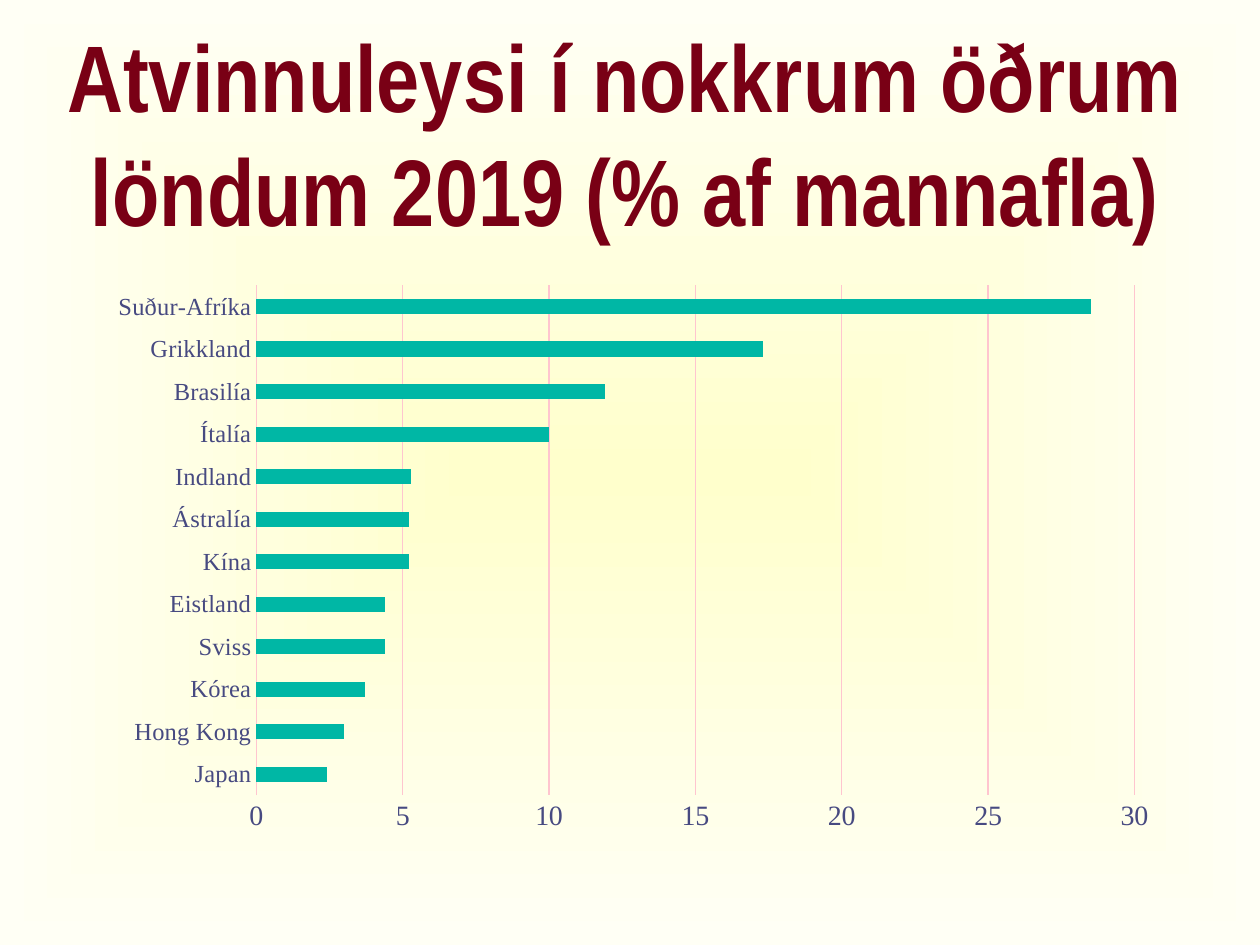
from lxml import etree
from pptx import Presentation
from pptx.chart.data import CategoryChartData
from pptx.dml.color import RGBColor
from pptx.enum.chart import XL_CHART_TYPE, XL_TICK_MARK
from pptx.enum.text import MSO_ANCHOR, PP_ALIGN
from pptx.oxml import parse_xml
from pptx.oxml.ns import nsdecls, qn
from pptx.util import Inches, Pt

BAR = XL_CHART_TYPE.BAR_CLUSTERED
NO_TICK = XL_TICK_MARK.NONE
MIDDLE = MSO_ANCHOR.MIDDLE
CENTER = PP_ALIGN.CENTER

CREAM = RGBColor(0xFF, 0xFF, 0xCC)
IVORY = RGBColor(0xFF, 0xFF, 0xF5)
MAROON = RGBColor(0x79, 0x00, 0x15)
INDIGO = RGBColor(0x47, 0x4A, 0x81)
PINK = RGBColor(0xFF, 0xC5, 0xCF)
TEAL = RGBColor(0x00, 0xB7, 0xA5)

WIDTH, HEIGHT = Inches(10), Inches(7.5)
SERIF = "Times New Roman"
TITLE = "Atvinnuleysi í nokkrum öðrum löndum 2019 (% af mannafla)"
TITLE_BOX = (0.035, 0.056, 0.922, 0.167)
CHART_BOX = (0.076, 0.29, 0.85, 0.6)
PLOT_BOX = {"x": 0.15, "y": 0.02, "w": 0.82, "h": 0.9}
UNEMPLOYMENT = {
    "Japan": 2.4, "Hong Kong": 3, "Kórea": 3.7, "Sviss": 4.4,
    "Eistland": 4.4, "Kína": 5.2, "Ástralía": 5.2, "Indland": 5.3,
    "Ítalía": 10, "Brasilía": 11.9, "Grikkland": 17.3, "Suður-Afríka": 28.5,
}


def place(box):
    return [int(share * size) for share, size in zip(box, (WIDTH, HEIGHT) * 2)]


def set_font(font, color, **values):
    for name, value in values.items():
        setattr(font, name, value)
    font.color.rgb = color


def set_line(line, color):
    line.color.rgb = color
    line.width = Pt(0.75)


def paint_background(slide):
    fill = slide.background.fill
    fill.gradient()
    for stop, color in zip(fill.gradient_stops, (CREAM, IVORY)):
        stop.color.rgb = color
    grad = slide.element.find(".//" + qn("a:gradFill"))
    for lin in grad.findall(qn("a:lin")):
        grad.remove(lin)
    center = 'l="50000" t="50000" r="50000" b="50000"'
    grad.append(parse_xml(
        f'<a:path {nsdecls("a")} path="shape"><a:fillToRect {center}/></a:path>'))


def add_title(slide, box):
    tf = slide.shapes.add_textbox(*place(box)).text_frame
    tf.word_wrap = True
    tf.vertical_anchor = MIDDLE
    p = tf.paragraphs[0]
    p.alignment = CENTER
    r = p.add_run()
    r.text = TITLE
    set_font(r.font, MAROON, name="Arial Narrow", size=Pt(54), bold=True)


def set_plot_layout(chart, box):
    area = chart.element.find(".//" + qn("c:plotArea"))
    for old in area.findall(qn("c:layout")):
        area.remove(old)
    layout = etree.Element(qn("c:layout"))
    manual = etree.SubElement(layout, qn("c:manualLayout"))
    values = {"layoutTarget": "inner", "xMode": "edge", "yMode": "edge", **box}
    for name, value in values.items():
        etree.SubElement(manual, qn(f"c:{name}")).set("val", str(value))
    area.insert(0, layout)


def add_bar_chart(slide, box):
    data = CategoryChartData()
    data.categories = list(UNEMPLOYMENT)
    data.add_series("Series 1", list(UNEMPLOYMENT.values()))
    chart = slide.shapes.add_chart(BAR, *place(box), data).chart
    chart.has_legend = False
    chart.has_title = False
    set_font(chart.font, MAROON, name=SERIF, size=Pt(10))
    set_plot_layout(chart, PLOT_BOX)

    plot = chart.plots[0]
    plot.gap_width = 182
    plot.vary_by_categories = False
    fill = plot.series[0].format.fill
    fill.solid()
    fill.fore_color.rgb = TEAL

    cat, val = chart.category_axis, chart.value_axis
    for axis, size in ((cat, 14), (val, 16)):
        axis.major_tick_mark = axis.minor_tick_mark = NO_TICK
        set_font(axis.tick_labels.font, INDIGO, name=SERIF, size=Pt(size))
    set_line(cat.format.line, PINK)
    val.format.line.fill.background()
    val.has_major_gridlines = True
    set_line(val.major_gridlines.format.line, PINK)
    val.minimum_scale, val.maximum_scale, val.major_unit = 0, 30, 5


def main():
    prs = Presentation()
    prs.slide_width, prs.slide_height = WIDTH, HEIGHT
    slide = prs.slides.add_slide(prs.slide_layouts[6])
    paint_background(slide)
    add_title(slide, TITLE_BOX)
    add_bar_chart(slide, CHART_BOX)
    prs.save("out.pptx")


if __name__ == "__main__":
    main()
